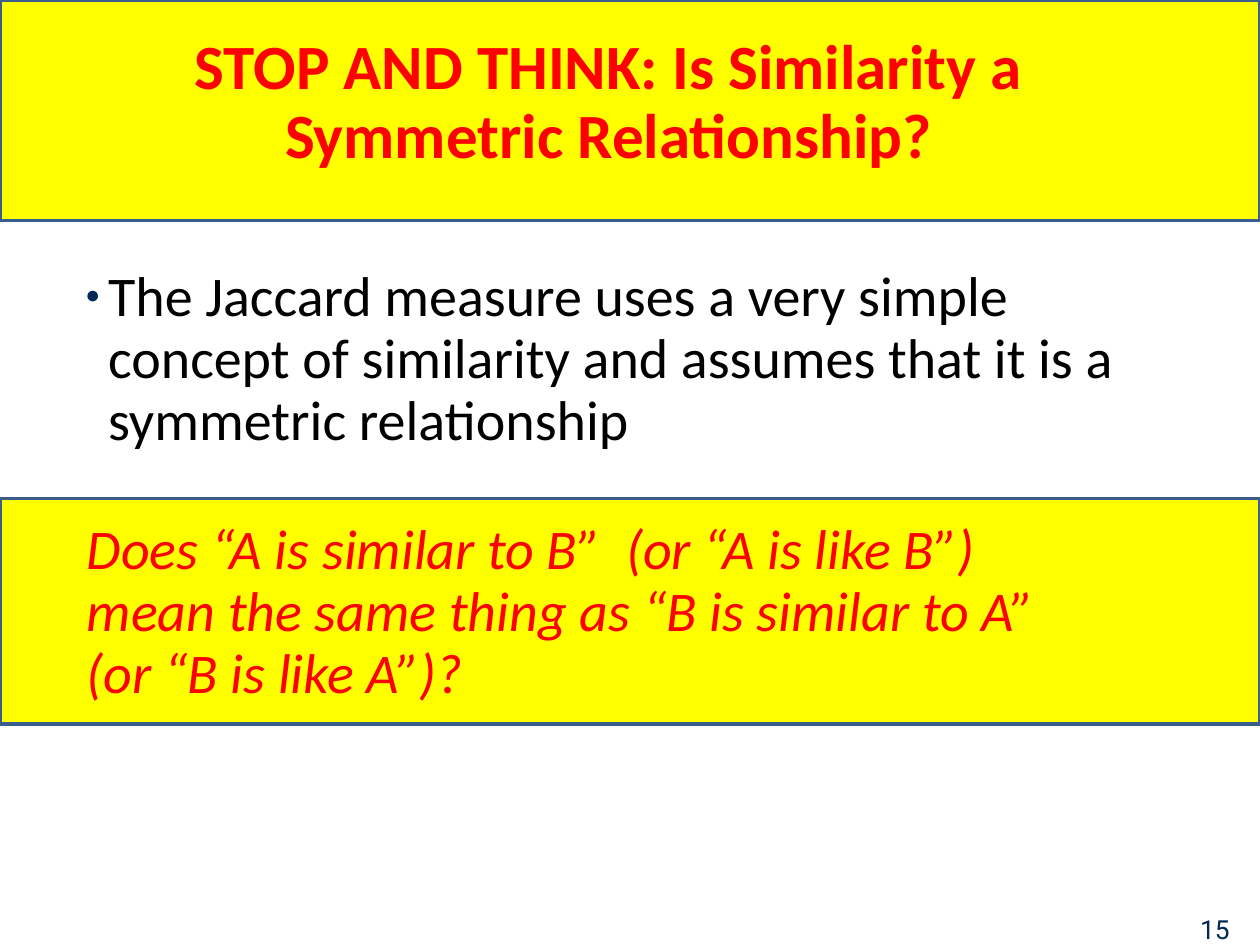
from dataclasses import dataclass, field
from typing import Any

from lxml import etree
from pptx import Presentation
from pptx import util as u
from pptx.dml import color
from pptx.enum import shapes, text
from pptx.oxml import ns

PAGE_WIDTH, PAGE_HEIGHT = 25.4, 19.05
YELLOW, RED, NAVY, BLUE, BLACK = "FFFF00", "FF0000", "002955", "3A5F8C", "000000"
BODY_SPACING = {"line_spacing": 0.92, "space_before": u.Pt(12.7)}


@dataclass
class Band:
    top: float
    height: float


@dataclass
class TextBlock:
    wording: str
    bounds: tuple[float, float, float, float]
    ink: str
    font: dict[str, Any]
    paragraph: dict[str, Any]
    frame: dict[str, Any] = field(default_factory=dict)
    bulleted: bool = False


def rgb(value: str) -> color.RGBColor:
    return color.RGBColor.from_string(value)


def apply_format(target: Any, values: dict[str, Any]) -> None:
    for name, value in values.items():
        setattr(target, name, value)


def draw_band(page: Any, band: Band) -> None:
    bounds = map(u.Cm, (0, band.top, PAGE_WIDTH, band.height))
    box = page.shapes.add_shape(shapes.MSO_SHAPE.RECTANGLE, *bounds)
    box.shadow.inherit = False
    box.fill.solid()
    box.fill.fore_color.rgb = rgb(YELLOW)
    box.line.color.rgb = rgb(BLUE)
    box.line.width = u.Pt(2)


def add_bullet(para: Any) -> None:
    properties = para._p.get_or_add_pPr()
    indent = u.Cm(0.46)
    properties.set("marL", str(indent))
    properties.set("indent", str(-indent))
    bullet_color = etree.SubElement(properties, ns.qn("a:buClr"))
    etree.SubElement(bullet_color, ns.qn("a:srgbClr"), val=NAVY)
    etree.SubElement(properties, ns.qn("a:buSzPct"), val="44000")
    etree.SubElement(properties, ns.qn("a:buFont"), typeface="Arial")
    etree.SubElement(properties, ns.qn("a:buChar"), char="●")


def draw_text(page: Any, block: TextBlock) -> None:
    box = page.shapes.add_textbox(*map(u.Cm, block.bounds))
    apply_format(box.text_frame, {"word_wrap": True} | block.frame)
    para = box.text_frame.paragraphs[0]
    para.text = block.wording
    apply_format(para, block.paragraph)
    if block.bulleted:
        add_bullet(para)
    for span in para.runs:
        apply_format(span.font, block.font)
        span.font.color.rgb = rgb(block.ink)


BANDS = [Band(0, 4.45), Band(10.05, 4.55)]

BLOCKS = [
    TextBlock(
        "STOP AND THINK: Is Similarity a Symmetric Relationship?",
        (0.84, 0.43, 22.86, 3.3),
        RED,
        {"name": "Calibri", "size": u.Pt(36), "bold": True},
        {"alignment": text.PP_ALIGN.CENTER, "line_spacing": 0.92},
        {"vertical_anchor": text.MSO_ANCHOR.MIDDLE},
    ),
    TextBlock(
        "15",
        (23.89, 18.31, 1.2, 0.61),
        NAVY,
        {"name": "Roboto", "size": u.Pt(15)},
        {"alignment": text.PP_ALIGN.CENTER},
        {
            "word_wrap": False,
            "margin_left": u.Cm(0.18),
            "margin_right": u.Cm(0.18),
            "margin_top": u.Cm(0.1),
            "margin_bottom": u.Cm(0.1),
        },
    ),
    TextBlock(
        "Does “A is similar to B”  (or “A is like B”)\n"
        "mean the same thing as “B is similar to A”\n"
        "(or “B is like A”)?",
        (1.5, 10.36, 21.77, 4.04),
        RED,
        {"name": "Calibri", "size": u.Pt(32), "italic": True},
        BODY_SPACING,
        {"auto_size": text.MSO_AUTO_SIZE.SHAPE_TO_FIT_TEXT},
    ),
    TextBlock(
        "The Jaccard measure uses a very simple concept of similarity "
        "and assumes that it is a symmetric relationship",
        (1.47, 5.26, 22.23, 4.8),
        BLACK,
        {"name": "Calibri", "size": u.Pt(32)},
        BODY_SPACING,
        {"auto_size": text.MSO_AUTO_SIZE.SHAPE_TO_FIT_TEXT},
        bulleted=True,
    ),
]


def main() -> None:
    deck = Presentation()
    deck.slide_width = u.Cm(PAGE_WIDTH)
    deck.slide_height = u.Cm(PAGE_HEIGHT)
    page = deck.slides.add_slide(deck.slide_layouts[6])
    for band in BANDS:
        draw_band(page, band)
    for block in BLOCKS:
        draw_text(page, block)
    deck.save("out.pptx")


if __name__ == "__main__":
    main()
